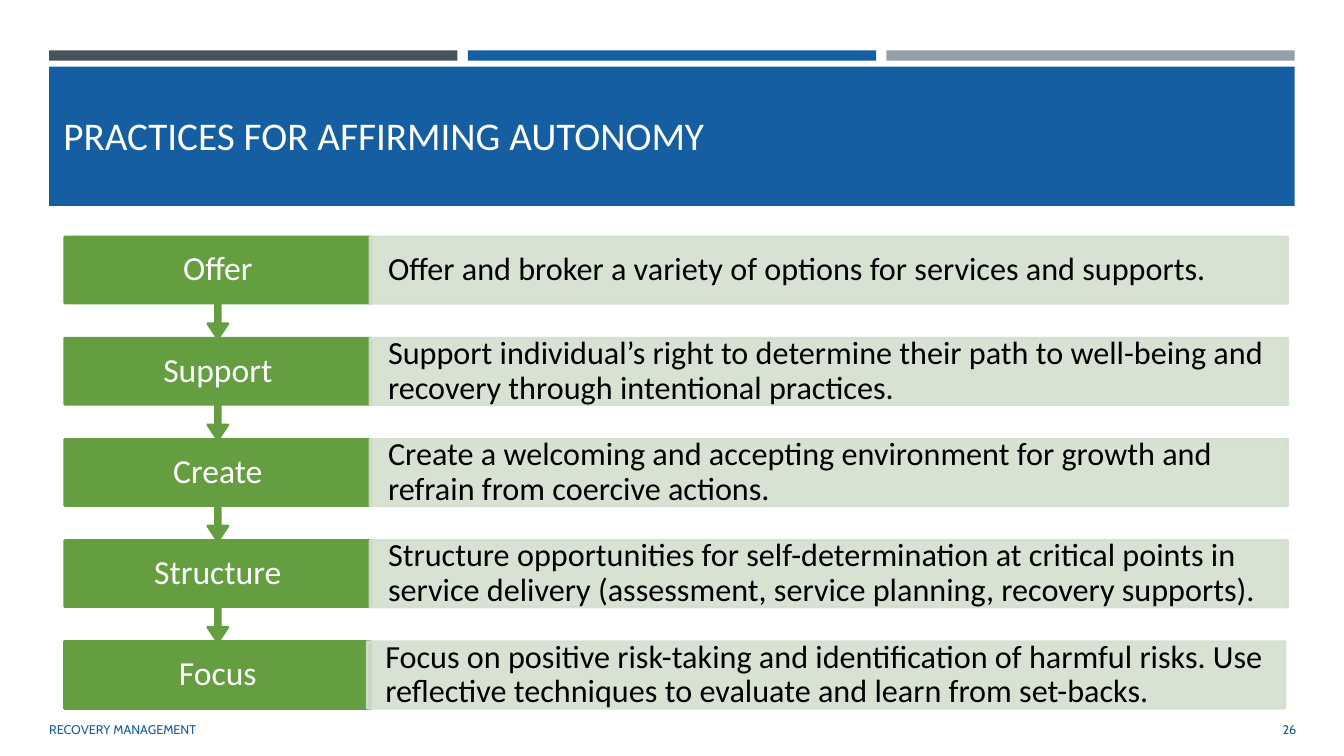
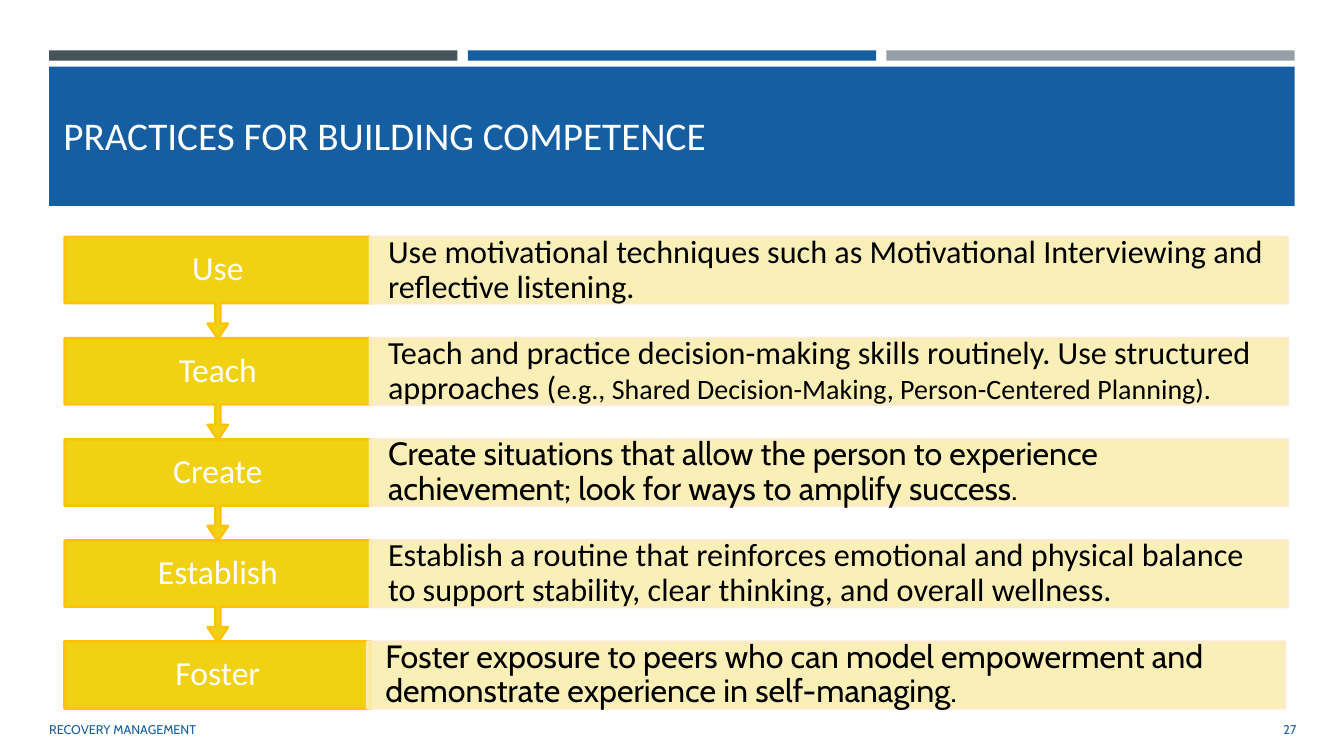
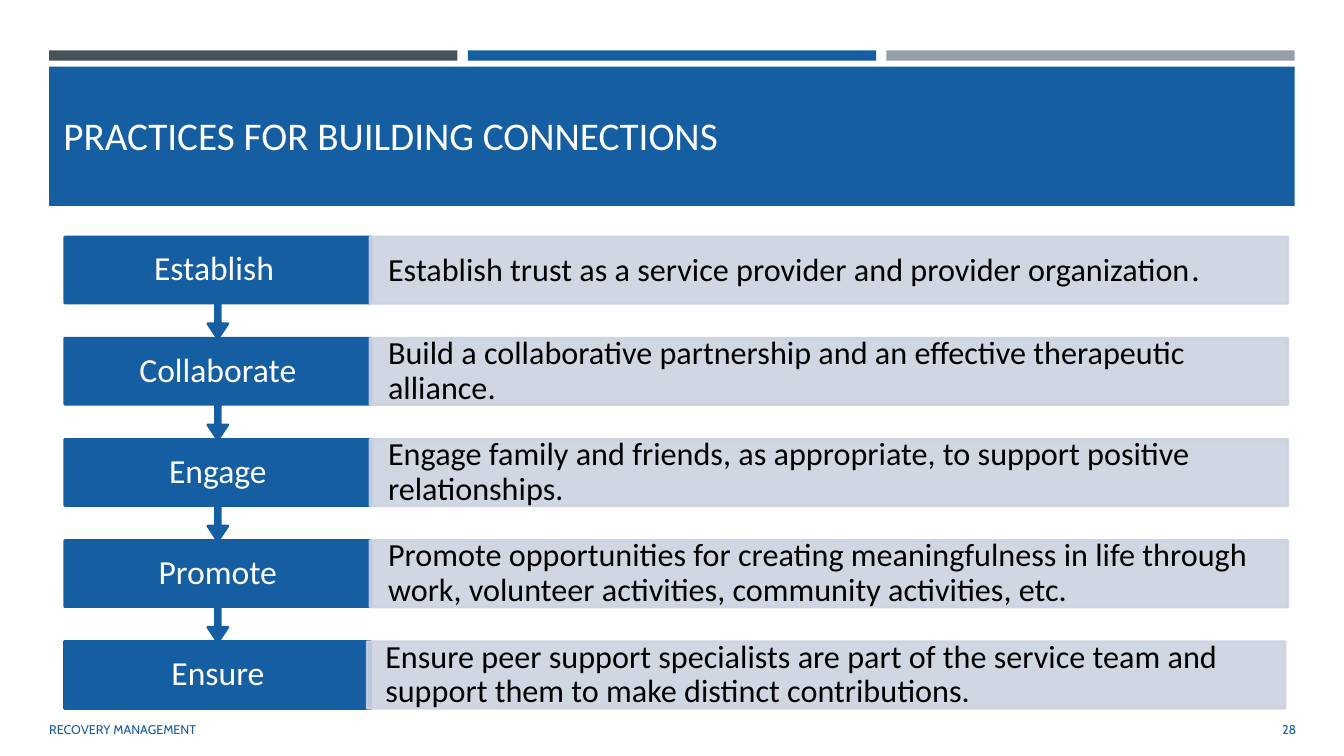
from dataclasses import dataclass
from typing import Optional

from lxml.etree import SubElement
from pptx import Presentation
from pptx.dml.color import RGBColor
from pptx.enum.shapes import MSO_SHAPE as Preset
from pptx.enum.text import MSO_ANCHOR as Anchor, PP_ALIGN as Align
from pptx.oxml.ns import qn
from pptx.util import Cm, Pt

COLOURS = {
    "slate": "465359", "blue": "155EA1", "grey": "969FA7",
    "white": "FFFFFF", "black": "000000",
    "green": "649E40", "pale green": "D3DFCF",
    "yellow": "F1D113", "amber": "FEC306",
    "pale yellow": "FAEFB0", "peach": "FFE9CC", "pale blue": "CCD2E0",
}
BODY, ACCENT = "Calibri", "Cabin"

# Row geometry in centimetres
FIRST_TOP, PITCH, ROW_HEIGHT, CALLOUT_HEIGHT = 5.97, 2.55, 1.68, 2.57
LABEL_LEFT, LABEL_WIDTH = 1.63, 7.72
DETAIL_LEFT, LAST_DETAIL_LEFT, DETAIL_WIDTH = 9.32, 9.25, 23.14


@dataclass(frozen=True)
class Area:
    left: float
    top: float
    width: float
    height: float

    def lengths(self) -> tuple:
        return Cm(self.left), Cm(self.top), Cm(self.width), Cm(self.height)


@dataclass(frozen=True)
class Style:
    size: float
    colour: str
    font: str = BODY
    align: Align = Align.LEFT
    spacing: float = 1.0
    inset: float = 0.25


@dataclass(frozen=True)
class Step:
    label: str
    detail: str
    font: str = BODY
    ending: str = ""
    ending_size: float = 23


@dataclass(frozen=True)
class Theme:
    fill: str
    line: str
    pale_fill: str
    pale_line: str


@dataclass(frozen=True)
class Practice:
    title: str
    number: int
    theme: Theme
    steps: tuple


TITLE = Style(28, "white")
FOOTER = Style(9, "blue", ACCENT)
NUMBER = Style(9, "blue", ACCENT, Align.RIGHT)
LABEL = Style(24, "white", align=Align.CENTER, spacing=0.9, inset=0.56)

PRACTICES = (
    Practice("PRACTICES FOR AFFIRMING AUTONOMY", 26,
             Theme("green", "green", "pale green", "pale green"), (
        Step("Offer", "Offer and broker a variety of options for services and supports."),
        Step("Support", "Support individual’s right to determine their path to well-being "
             "and recovery through intentional practices."),
        Step("Create", "Create a welcoming and accepting environment for growth and "
             "refrain from coercive actions."),
        Step("Structure", "Structure opportunities for self-determination at critical points "
             "in service delivery (assessment, service planning, recovery supports)."),
        Step("Focus", "Focus on positive risk-taking and identification of harmful risks. "
             "Use reflective techniques to evaluate and learn from set-backs."),
    )),
    Practice("PRACTICES FOR BUILDING COMPETENCE", 27,
             Theme("yellow", "amber", "pale yellow", "peach"), (
        Step("Use", "Use motivational techniques such as Motivational Interviewing and "
             "reflective listening."),
        Step("Teach", "Teach and practice decision-making skills routinely. Use structured "
             "approaches (", ending="e.g., Shared Decision-Making, Person-Centered Planning).",
             ending_size=20),
        Step("Create", "Create situations that allow the person to experience\n"
             "achievement; look for ways to amplify success.", ACCENT),
        Step("Establish", "Establish a routine that reinforces emotional and physical balance "
             "to support stability, clear thinking, and overall wellness."),
        Step("Foster", "Foster exposure to peers who can model empowerment and demonstrate "
             "experience in self-managing.", ACCENT),
    )),
    Practice("PRACTICES FOR BUILDING CONNECTIONS", 28,
             Theme("blue", "blue", "pale blue", "pale blue"), (
        Step("Establish ", "Establish trust as a service provider and provider organization",
             ending=".", ending_size=24),
        Step("Collaborate", "Build a collaborative partnership and an effective therapeutic "
             "alliance."),
        Step("Engage", "Engage family and friends, as appropriate, to support positive "
             "relationships."),
        Step("Promote", "Promote opportunities for creating meaningfulness in life through "
             "work, volunteer activities, community activities, etc."),
        Step("Ensure", "Ensure peer support specialists are part of the service team and "
             "support them to make distinct contributions."),
    )),
)


def rgb(name: str) -> RGBColor:
    return RGBColor.from_string(COLOURS[name])


def apply(target, values: dict) -> None:
    for name, value in values.items():
        setattr(target, name, value)


def add_span(para, text: str, style: Style, size: float) -> None:
    for index, line in enumerate(text.split("\n")):
        if index:
            para.add_line_break()
        span = para.add_run()
        span.text = line
        apply(span.font, {"name": style.font, "size": Pt(size)})
        span.font.color.rgb = rgb(style.colour)


def write(box, text: str, style: Style):
    """Fill a box with one styled paragraph and return the paragraph."""
    frame = box.text_frame
    apply(frame, {
        "word_wrap": True, "vertical_anchor": Anchor.MIDDLE,
        "margin_left": Cm(style.inset), "margin_right": Cm(style.inset),
        "margin_top": 0, "margin_bottom": 0,
    })
    para = frame.paragraphs[0]
    apply(para, {"alignment": style.align, "line_spacing": style.spacing})
    add_span(para, text, style, style.size)
    return para


def add_text(page, area: Area, text: str, style: Style) -> None:
    write(page.shapes.add_textbox(*area.lengths()), text, style)


def add_block(page, area: Area, fill: str, line: Optional[str] = None,
              preset: Preset = Preset.RECTANGLE, opacity: int = 100):
    block = page.shapes.add_shape(preset, *area.lengths())
    block.shadow.inherit = False
    block.fill.solid()
    block.fill.fore_color.rgb = rgb(fill)
    if line:
        block.line.color.rgb = rgb(line)
        block.line.width = Pt(1.75)
    else:
        block.line.fill.background()
    if opacity < 100:
        for colour in block._element.spPr.iter(qn("a:srgbClr")):
            SubElement(colour, qn("a:alpha")).set("val", str(opacity * 1000))
    return block


def add_frame(page, practice: Practice) -> None:
    # Strips and title band
    for index, colour in enumerate(("slate", "blue", "grey")):
        add_block(page, Area(1.24 + index * 10.55, 1.27, 10.29, 0.26), colour)
    add_block(page, Area(1.24, 1.68, 31.39, 3.51), "blue")
    add_text(page, Area(1.35, 2.03, 31.12, 2.74), practice.title, TITLE)
    # Footer
    add_text(page, Area(0.99, 17.86, 18.95, 1.02), "RECOVERY MANAGEMENT", FOOTER)
    add_text(page, Area(30, 17.86, 2.92, 1.02), str(practice.number), NUMBER)


def add_step(page, step: Step, row: int, last: bool, theme: Theme) -> None:
    top = FIRST_TOP + row * PITCH
    # Label, with an arrow to the next step
    height = ROW_HEIGHT if last else CALLOUT_HEIGHT
    preset = Preset.RECTANGLE if last else Preset.DOWN_ARROW_CALLOUT
    label = add_block(page, Area(LABEL_LEFT, top, LABEL_WIDTH, height),
                      theme.fill, theme.line, preset)
    if not last:
        for index, value in enumerate((0.05, 0.1, 0.15, 0.65)):
            label.adjustments[index] = value
    write(label, step.label, LABEL)
    # Detail
    left = LAST_DETAIL_LEFT if last else DETAIL_LEFT
    detail = add_block(page, Area(left, top, DETAIL_WIDTH, ROW_HEIGHT),
                       theme.pale_fill, theme.pale_line, opacity=90)
    style = Style(23, "black", step.font, spacing=0.9, inset=0.46)
    para = write(detail, step.detail, style)
    if step.ending:
        add_span(para, step.ending, style, step.ending_size)


def main() -> None:
    deck = Presentation()
    apply(deck, {"slide_width": Cm(33.87), "slide_height": Cm(19.05)})
    for practice in PRACTICES:
        page = deck.slides.add_slide(deck.slide_layouts[6])
        add_frame(page, practice)
        # Bottom row first, so that each arrow overlaps the row below it
        final = len(practice.steps) - 1
        for row in range(final, -1, -1):
            add_step(page, practice.steps[row], row, row == final, practice.theme)
    deck.save("out.pptx")


if __name__ == "__main__":
    main()
